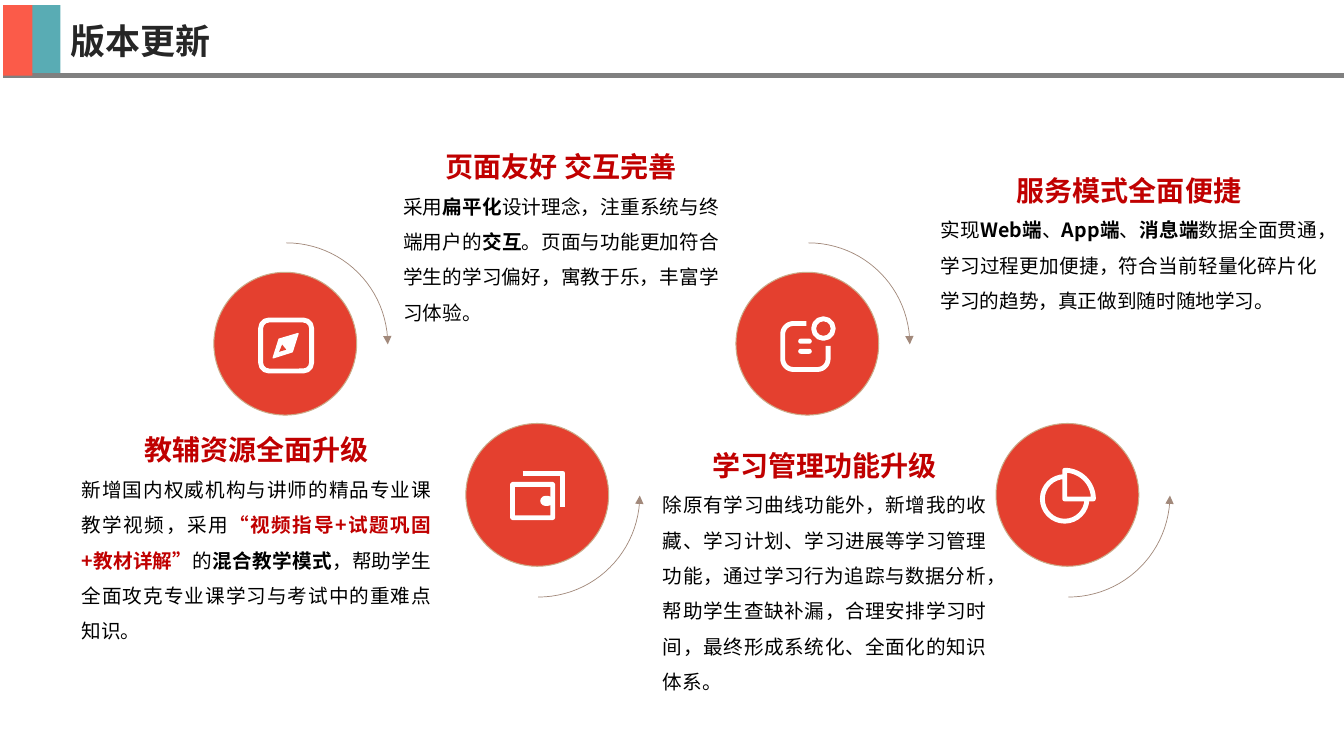
from math import cos, radians, sin

from lxml import etree
from pptx import Presentation
from pptx.dml.color import RGBColor
from pptx.enum.shapes import MSO_CONNECTOR, MSO_SHAPE
from pptx.enum.text import MSO_ANCHOR, MSO_AUTO_SIZE, PP_ALIGN
from pptx.oxml.ns import qn
from pptx.util import Pt

OVAL, RECT, ROUND = MSO_SHAPE.OVAL, MSO_SHAPE.RECTANGLE, MSO_SHAPE.ROUNDED_RECTANGLE
LINE = MSO_CONNECTOR.STRAIGHT
LEFT, MID, JUST = PP_ALIGN.LEFT, PP_ALIGN.CENTER, PP_ALIGN.JUSTIFY
MIDDLE, GROW = MSO_ANCHOR.MIDDLE, MSO_AUTO_SIZE.SHAPE_TO_FIT_TEXT

COLORS = {"red": "E4402F", "rim": "CBAB89", "arc": "A2897B", "head": "C00000",
          "text": "000000", "title": "262626", "teal": "59ACB4",
          "coral": "FB5B49", "rule": "808080", "white": "FFFFFF"}
HEAD, BODY = "Noto Sans CJK JP", "Noto Sans CJK SC"
STROKE = 3.5

# Left, top, width, height, heading, runs of (text, style)
NOTES = [
    (288, 94.6, 225.6, 135.4, "页面友好 交互完善", [
        ("采用", ""), ("扁平化", "bold"), ("设计理念，注重系统与终端用户的", ""),
        ("交互", "bold"),
        ("。页面与功能更加符合学生的学习偏好，寓教于乐，丰富学习体验。", "")]),
    (58.3, 297, 249.8, 160.6, "教辅资源全面升级", [
        ("新增国内权威机构与讲师的精品专业课教学视频，采用", ""),
        ("“视频指导+试题巩固+教材详解”", "red"), ("的", ""),
        ("混合教学模式", "bold"),
        ("，帮助学生全面攻克专业课学习与考试中的重难点知识。", "")]),
    (473.5, 308, 231.1, 185.8, "学习管理功能升级", [
        ("除原有学习曲线功能外，新增我的收藏、学习计划、学习进展等学习管理功能，"
         "通过学习行为追踪与数据分析，帮助学生查缺补漏，合理安排学习时间，"
         "最终形成系统化、全面化的知识体系。", "")]),
    (671.8, 111.6, 269.3, 109.4, "服务模式全面便捷", [
        ("实现", ""), ("Web端", "bold"), ("、", ""), ("App端", "bold"),
        ("、", ""), ("消息端", "bold"),
        ("数据全面贯通，学习过程更加便捷，符合当前轻量化碎片化学习的趋势，"
         "真正做到随时随地学习。", "")]),
]


def rgb(name):
    return RGBColor.from_string(COLORS[name])


def paint(shape, fill=None, line=None, width=STROKE):
    shape.shadow.inherit = False
    if fill:
        shape.fill.solid()
        shape.fill.fore_color.rgb = rgb(fill)
    else:
        shape.fill.background()
    if line:
        shape.line.color.rgb = rgb(line)
        shape.line.width = Pt(width)
    else:
        shape.line.fill.background()


def block(slide, kind, x, y, w, h, fill=None, line=None, width=STROKE):
    shape = slide.shapes.add_shape(kind, Pt(x), Pt(y), Pt(w), Pt(h))
    paint(shape, fill, line, width)
    return shape


def bend(x, y, r, start, end):
    """Points along an arc, angles clockwise from the right."""
    turns = [radians(start + (end - start) * i / 24) for i in range(25)]
    return [(x + r * cos(a), y + r * sin(a)) for a in turns]


def trace(slide, x, y, dots, fill=None, line=None, width=STROKE, close=False):
    spots = [(Pt(x + dx), Pt(y + dy)) for dx, dy in dots]
    pen = slide.shapes.build_freeform(*spots[0])
    pen.add_line_segments(spots[1:], close=close)
    shape = pen.convert_to_shape()
    paint(shape, fill, line, width)
    return shape


def style(run, size, font, color, bold):
    run.font.size = Pt(size)
    run.font.bold = bold
    run.font.color.rgb = rgb(color)
    run.font.name = font
    etree.SubElement(run.font._element, qn("a:ea"), typeface=font)


def note(slide, x, y, w, h, head, parts):
    frame = slide.shapes.add_textbox(Pt(x), Pt(y), Pt(w), Pt(h)).text_frame
    frame.word_wrap = True
    frame.auto_size = GROW
    frame.margin_left = frame.margin_right = 0
    frame.margin_top = frame.margin_bottom = 0
    top, body = frame.paragraphs[0], frame.add_paragraph()
    top.text = head
    top.alignment, body.alignment = MID, JUST
    top.line_spacing = body.line_spacing = 1.5
    style(top.runs[0], 20, HEAD, "head", True)
    for text, look in parts:
        run = body.add_run()
        run.text = text
        style(run, 14, BODY, "head" if look == "red" else "text", look != "")


def compass(slide, x, y):
    case = block(slide, ROUND, x - 17.6, y - 16.9, 36.4, 36.4, line="white")
    case.adjustments[0] = 0.16
    needle = [(9.1, -7.2), (-4.4, -3.2), (-8.6, 10.1), (5, 5.8)]
    trace(slide, x, y, needle, fill="white", line="white", width=1, close=True)
    hole = [(-4.4, 5.8), (-2.2, 0.7), (0.7, 4.3)]
    trace(slide, x, y, hole, fill="red", close=True)


def tablet(slide, x, y):
    edge = [(-0.7, -14.4), *bend(-10, -6.8, 7.6, 270, 180),
            *bend(-10, 10.8, 7.6, 180, 90), *bend(7.2, 10.8, 7.6, 90, 0),
            (14.8, 1.5)]
    trace(slide, x, y, edge, line="white")
    block(slide, OVAL, x + 4.5, y - 17.8, 14, 14, line="white")
    for dy in (-3.6, 3.6):
        bar = block(slide, ROUND, x - 6.5, y + dy, 9.7, 3.6, fill="white")
        bar.adjustments[0] = 0.5


def wallet(slide, x, y):
    front = block(slide, ROUND, x - 17.7, y - 7.5, 28.8, 23.8, line="white")
    front.adjustments[0] = 0.02
    clasp = block(slide, ROUND, x + 2.1, y + 0.7, 9, 7.2, fill="white")
    clasp.adjustments[0] = 0.5
    trace(slide, x, y, [(-10.5, -15.5), (18.3, -15.5), (18.3, 9)], line="white")


def chart(slide, x, y):
    hub = (-2, 2.9)
    trace(slide, x, y, bend(*hub, 15.9, 0, 270), line="white")
    trace(slide, x, y, [hub, *bend(*hub, 20.5, 270, 360)], line="white", close=True)


def stage(slide, x, y, start, icon):
    """Disc with its icon and a quarter-turn arrow ending at the right."""
    block(slide, OVAL, x - 51, y - 51, 102, 102, "red", "rim", 0.75)
    arrow = trace(slide, x, y, bend(0.7, 0.5, 72.5, start, 0), line="arc", width=0.5)
    ln = arrow.line._get_or_add_ln()
    etree.SubElement(ln, qn("a:tailEnd"), type="triangle")
    icon(slide, x, y)


def header(slide):
    block(slide, RECT, 22.3, 3.6, 20.9, 50.4, fill="teal")
    rule = slide.shapes.add_connector(LINE, Pt(2.2), Pt(54), Pt(960), Pt(54))
    rule.line.color.rgb = rgb("rule")
    rule.line.width = Pt(3)
    etree.SubElement(rule._element.spPr, qn("a:effectLst"))
    block(slide, RECT, 2.2, 3.6, 20.9, 50.4, fill="coral")
    title = slide.shapes.title
    title.left, title.top, title.width, title.height = Pt(43), Pt(10), Pt(178.6), Pt(37.4)
    frame = title.text_frame
    frame.text = "版本更新"
    frame.vertical_anchor = MIDDLE
    frame.paragraphs[0].alignment = LEFT
    style(frame.paragraphs[0].runs[0], 25, HEAD, "title", True)


def main():
    deck = Presentation()
    deck.slide_width, deck.slide_height = Pt(960), Pt(540)
    slide = deck.slides.add_slide(deck.slide_layouts[5])
    # Zigzag of stages: upper arrows fall, lower arrows rise
    stage(slide, 203.8, 245.5, -90, compass)
    stage(slide, 576.7, 245.5, -90, tablet)
    stage(slide, 383.8, 353.5, 90, wallet)
    stage(slide, 762.5, 353.5, 90, chart)
    # Descriptions
    for item in NOTES:
        note(slide, *item)
    # Title bar
    header(slide)
    deck.save("out.pptx")


if __name__ == "__main__":
    main()
